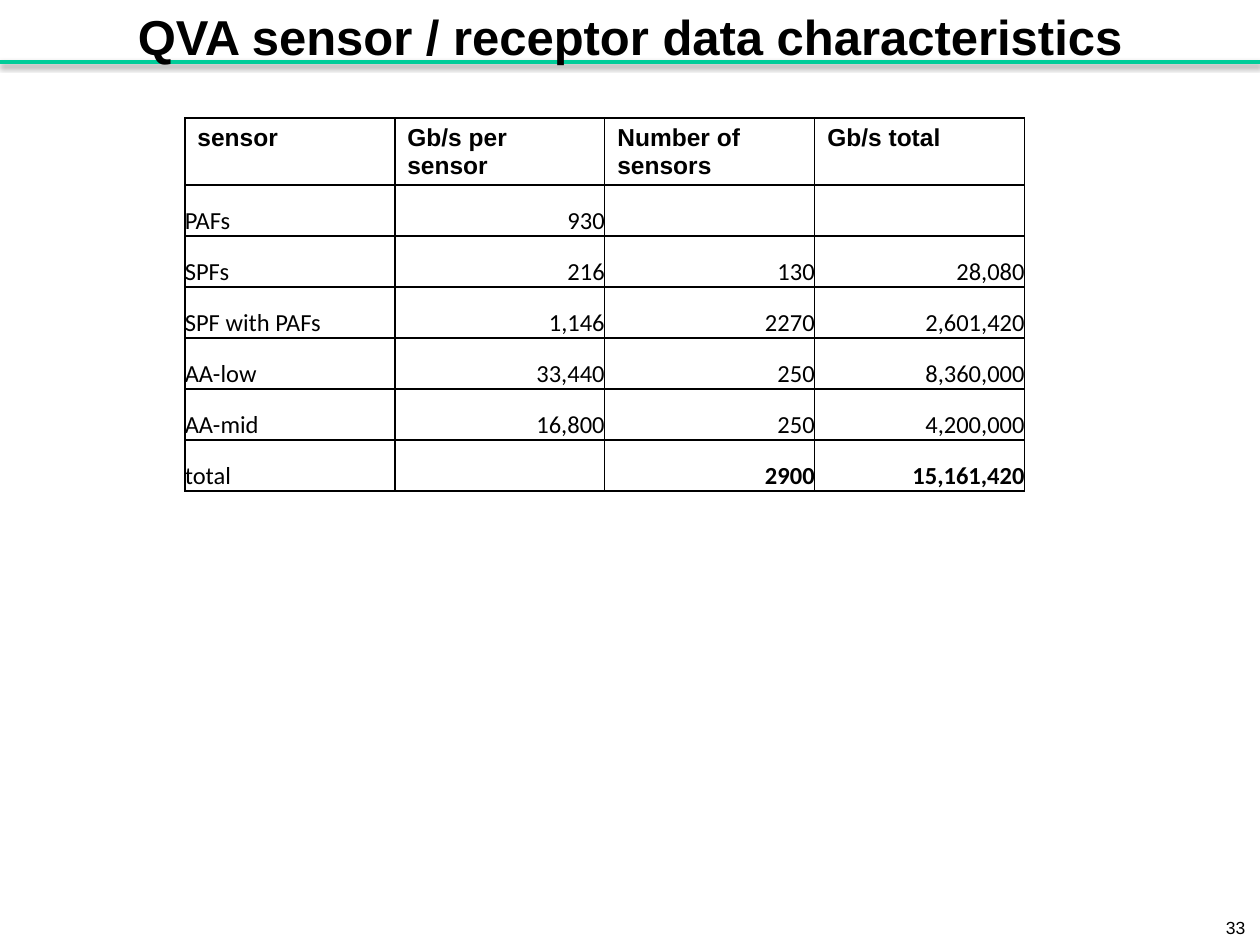
from dataclasses import dataclass

from lxml.etree import SubElement
from pptx import Presentation
from pptx.dml.color import RGBColor
from pptx.enum.shapes import MSO_CONNECTOR as Connector
from pptx.enum.text import MSO_ANCHOR as Anchor, PP_ALIGN as Align
from pptx.oxml import parse_xml
from pptx.oxml.ns import nsdecls, qn
from pptx.util import Pt


@dataclass(frozen=True)
class Theme:
    black: RGBColor = RGBColor(0x00, 0x00, 0x00)
    white: RGBColor = RGBColor(0xFF, 0xFF, 0xFF)
    green: RGBColor = RGBColor(0x00, 0xCC, 0x99)
    heading_font: str = "Arial"
    body_font: str = "Calibri"
    title_size: int = 28
    table_size: int = 14
    number_size: int = 10


theme = Theme()


def write(text_frame, text, size, font, bold=False, align=Align.LEFT):
    paragraph = text_frame.paragraphs[0]
    paragraph.alignment = align
    run = paragraph.add_run()
    run.text = text
    run.font.size = Pt(size)
    run.font.name = font
    run.font.bold = bold
    run.font.color.rgb = theme.black


def add_borders(cell):
    properties = cell._tc.get_or_add_tcPr()
    for position, side in enumerate(("lnL", "lnR", "lnT", "lnB")):
        properties.insert(position, parse_xml(
            f'<a:{side} {nsdecls("a")} w="{Pt(1)}"><a:solidFill>'
            f'<a:srgbClr val="{theme.black}"/></a:solidFill></a:{side}>'))


presentation = Presentation()
presentation.slide_width, presentation.slide_height = Pt(720), Pt(540)
slide = presentation.slides.add_slide(presentation.slide_layouts[6])

# Slide number
number_box = slide.shapes.add_textbox(Pt(693.4), Pt(520.6), Pt(26.6), Pt(19.4))
number_box.text_frame.word_wrap = False
write(number_box.text_frame, "33", theme.number_size, theme.heading_font)

# Green rule with a soft shadow below it
rule = slide.shapes.add_connector(Connector.STRAIGHT, Pt(0), Pt(35.5), Pt(720), Pt(35.5))
rule.line.color.rgb = theme.green
rule.line.width = Pt(2)
effects = SubElement(rule._element.spPr, qn("a:effectLst"))
effects.append(parse_xml(
    f'<a:outerShdw {nsdecls("a")} blurRad="{Pt(3.1)}" dist="{Pt(1.6)}" dir="5400000" '
    f'rotWithShape="0"><a:srgbClr val="{theme.black}"><a:alpha val="38000"/>'
    '</a:srgbClr></a:outerShdw>'))

# Title
title_box = slide.shapes.add_textbox(Pt(0), Pt(0), Pt(720), Pt(36))
title_frame = title_box.text_frame
title_frame.word_wrap = True
title_frame.vertical_anchor = Anchor.TOP
title_frame.margin_top, title_frame.margin_bottom = Pt(3.6), Pt(0)
write(title_frame, "QVA sensor / receptor data characteristics",
      theme.title_size, theme.heading_font, bold=True, align=Align.CENTER)

# Sensor table
rows = [
    ("sensor", "Gb/s per sensor", "Number of sensors", "Gb/s total"),
    ("PAFs", "930", "", ""),
    ("SPFs", "216", "130", "28,080"),
    ("SPF with PAFs", "1,146", "2270", "2,601,420"),
    ("AA-low", "33,440", "250", "8,360,000"),
    ("AA-mid", "16,800", "250", "4,200,000"),
    ("total", "", "2900", "15,161,420"),
]
header_height, row_height, column_width = 38.4, 29.15, 120
table_height = header_height + row_height * (len(rows) - 1)
table = slide.shapes.add_table(len(rows), len(rows[0]), Pt(105.6), Pt(67.4),
                               Pt(column_width * len(rows[0])), Pt(table_height)).table
table.first_row = table.horz_banding = False
for column in table.columns:
    column.width = Pt(column_width)

for row_index, values in enumerate(rows):
    is_header = row_index == 0
    is_total = row_index == len(rows) - 1
    table.rows[row_index].height = Pt(header_height if is_header else row_height)
    for column_index, value in enumerate(values):
        cell = table.cell(row_index, column_index)
        cell.fill.solid()
        cell.fill.fore_color.rgb = theme.white
        add_borders(cell)
        if not value:
            continue
        is_number = not is_header and column_index > 0
        cell.margin_bottom = Pt(0)
        if not is_header:
            cell.vertical_anchor = Anchor.BOTTOM
            cell.margin_left = cell.margin_right = cell.margin_top = Pt(0)
        write(cell.text_frame, value, theme.table_size,
              theme.heading_font if is_header else theme.body_font,
              bold=is_header or (is_total and is_number),
              align=Align.RIGHT if is_number else Align.LEFT)

presentation.save("out.pptx")
